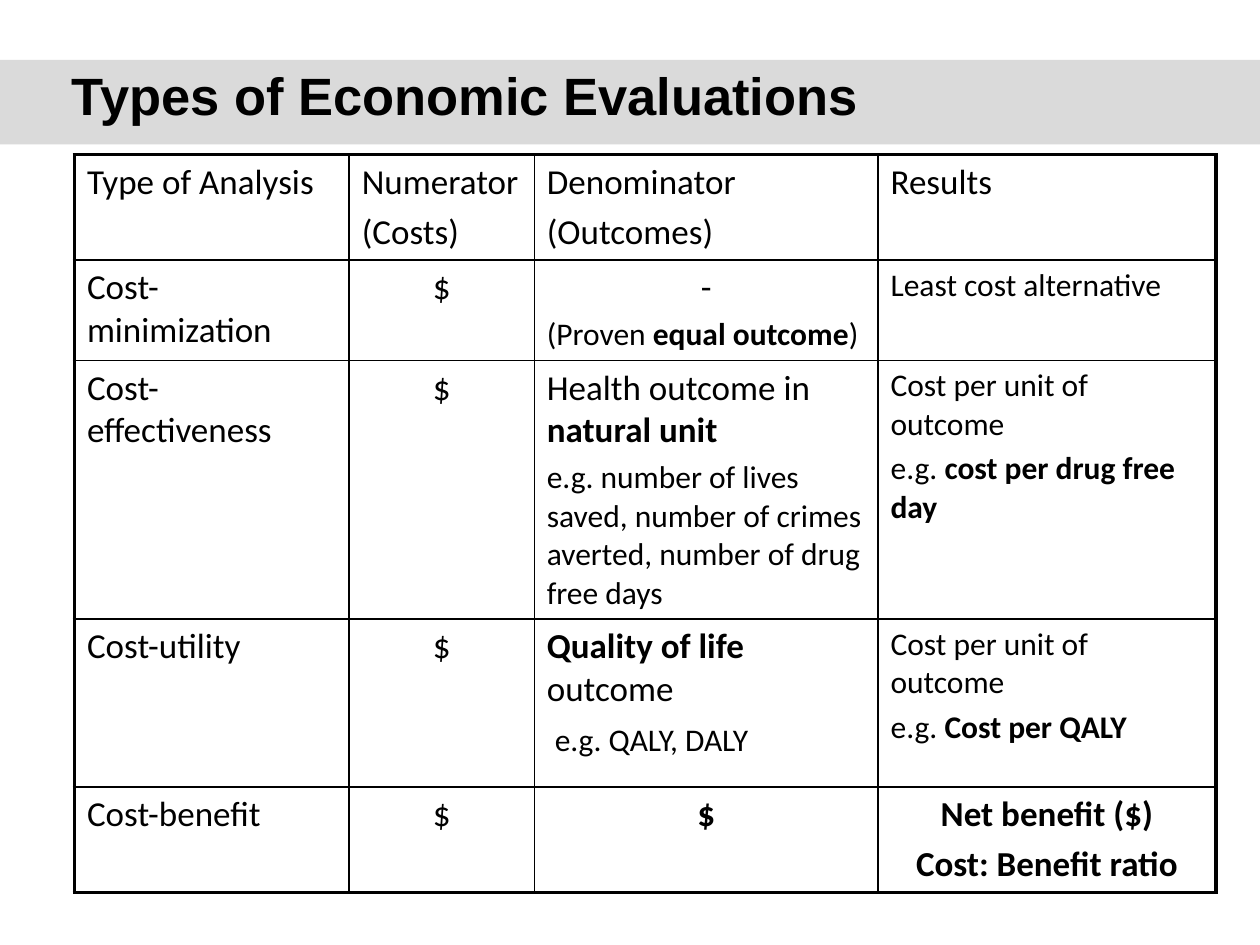
from dataclasses import dataclass

from lxml import etree
from pptx import Presentation
from pptx import util as u
from pptx.dml.color import RGBColor
from pptx.enum import shapes, text
from pptx.oxml.ns import qn

BLACK, WHITE, BAND = "000000", "FFFFFF", "DADADA"
THIN, THICK = 1, 2.25


@dataclass
class Para:
    """One paragraph; the parts between asterisks are bold."""
    text: str
    size: int = 20
    centered: bool = False
    before: float = 4
    indent: float = 0  # cm


def color(value: str) -> RGBColor:
    return RGBColor.from_string(value)


def small(content: str, **options) -> Para:
    return Para(content, 18, before=3.6, **options)


def center(content: str) -> Para:
    return Para(content, centered=True)


COL_WIDTHS = [5.54, 3.73, 6.93, 6.81]
ROW_HEIGHTS = [2.12, 2.02, 5.2, 3.39, 2.12]
COST = [center("$")]
UNIT_COST = small("Cost per unit of outcome")
ROWS = [
    [[Para("Type of Analysis")],
     [Para("Numerator"), Para("(Costs)")],
     [Para("Denominator"), Para("(Outcomes)")],
     [Para("Results")]],
    [[Para("Cost-minimization")], COST,
     [center("-"), small("(Proven *equal outcome*)")],
     [small("Least cost alternative")]],
    [[Para("Cost-effectiveness")], COST,
     [Para("Health outcome in *natural unit*"),
      small("e.g. number of lives saved, number of crimes averted, "
            "number of drug free days")],
     [UNIT_COST, small("e.g. *cost per drug free day*")]],
    [[Para("Cost-utility")], COST,
     [Para("*Quality of life *outcome"),
      Para("e.g. QALY, DALY", 18, before=6, indent=0.16)],
     [UNIT_COST, small("e.g. *Cost per QALY*")]],
    [[Para("Cost-benefit")], COST,
     [center("*$*")],
     [center("*Net benefit ($)*"), center("*Cost: Benefit ratio*")]],
]


def write_paragraphs(tf, paras: list[Para]) -> None:
    for i, para in enumerate(paras):
        p = tf.add_paragraph() if i else tf.paragraphs[0]
        if para.indent:
            p._p.get_or_add_pPr().set("marL", str(u.Cm(para.indent)))
        p.alignment = text.PP_ALIGN.CENTER if para.centered else text.PP_ALIGN.LEFT
        p.space_before = u.Pt(para.before if i else 0)
        for n, part in enumerate(para.text.split("*")):
            if part:
                r = p.add_run()
                r.text = part
                r.font.name = "Calibri"
                r.font.size = u.Pt(para.size)
                r.font.bold = n % 2 == 1
                r.font.color.rgb = color(BLACK)


def set_borders(cell, widths: dict[str, float]) -> None:
    tc_pr = cell._tc.get_or_add_tcPr()
    for side, width in widths.items():
        ln = etree.SubElement(tc_pr, qn(f"a:ln{side}"), w=str(u.Pt(width)))
        fill = etree.SubElement(ln, qn("a:solidFill"))
        etree.SubElement(fill, qn("a:srgbClr"), val=BLACK)


def add_evaluation_table(s) -> None:
    n_rows, n_cols = len(ROW_HEIGHTS), len(COL_WIDTHS)
    table = s.shapes.add_table(
        n_rows, n_cols, u.Cm(1.5), u.Cm(3.12),
        u.Cm(sum(COL_WIDTHS)), u.Cm(sum(ROW_HEIGHTS))).table
    table.first_row = table.horz_banding = False
    for column, width in zip(table.columns, COL_WIDTHS):
        column.width = u.Cm(width)
    for row, height in zip(table.rows, ROW_HEIGHTS):
        row.height = u.Cm(height)
    for i, row in enumerate(ROWS):
        for j, paras in enumerate(row):
            cell = table.cell(i, j)
            # Thick frame around the table, thin lines inside
            set_borders(cell, {
                "L": THIN if j else THICK,
                "R": THIN if j < n_cols - 1 else THICK,
                "T": THIN if i else THICK,
                "B": THIN if i < n_rows - 1 else THICK,
            })
            cell.fill.solid()
            cell.fill.fore_color.rgb = color(WHITE)
            write_paragraphs(cell.text_frame, paras)


def add_title_band(s) -> None:
    sp = s.shapes.add_shape(shapes.MSO_SHAPE.RECTANGLE, 0, u.Cm(1.21),
                            u.Cm(25.4), u.Cm(1.7))
    sp.shadow.inherit = False
    sp.fill.solid()
    sp.fill.fore_color.rgb = color(BAND)
    sp.line.fill.background()
    # The band lies behind the title
    s.shapes._spTree.insert(2, sp._element)


def set_title(s) -> None:
    sp = s.shapes.title
    sp.left, sp.top, sp.width, sp.height = map(u.Cm, (1.45, 1.42, 22.45, 1.14))
    tf = sp.text_frame
    tf.text = "Types of Economic Evaluations"
    tf.margin_left = tf.margin_right = tf.margin_top = tf.margin_bottom = 0
    tf.vertical_anchor = text.MSO_ANCHOR.MIDDLE
    tf.auto_size = text.MSO_AUTO_SIZE.NONE
    p = tf.paragraphs[0]
    p.alignment = text.PP_ALIGN.LEFT
    p.line_spacing = 0.9
    font = p.runs[0].font
    font.name, font.size, font.bold = "Arial", u.Pt(30), True
    font.color.rgb = color(BLACK)


def main() -> None:
    prs = Presentation()
    prs.slide_width, prs.slide_height = u.Cm(25.4), u.Cm(19.05)
    s = prs.slides.add_slide(prs.slide_layouts[5])
    add_title_band(s)
    set_title(s)
    add_evaluation_table(s)
    prs.save("out.pptx")


if __name__ == "__main__":
    main()
